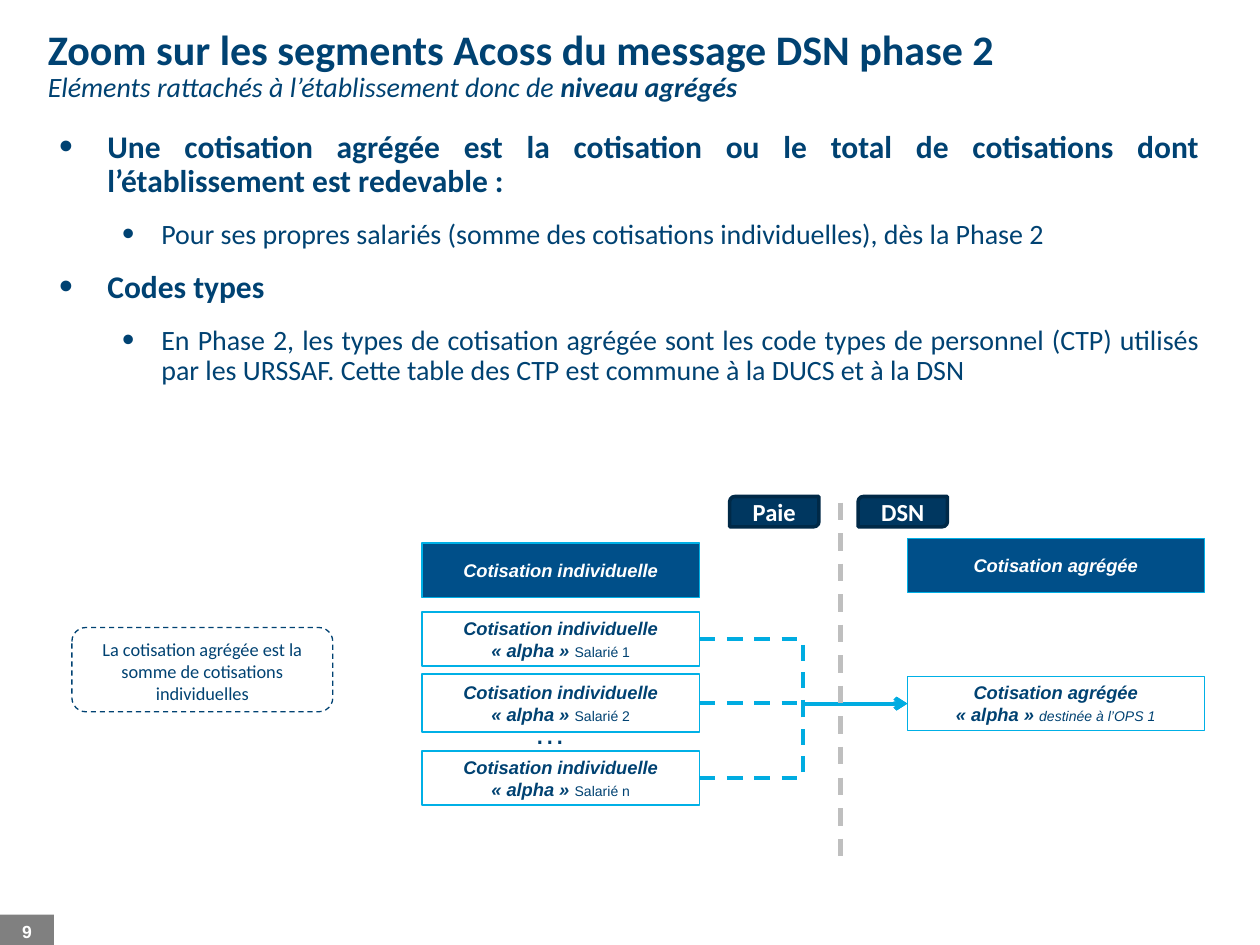
from dataclasses import dataclass
from typing import Any

from lxml import etree
from pptx import Presentation
from pptx import util as u
from pptx.dml.color import RGBColor
from pptx.enum import dml, shapes, text
from pptx.oxml import ns

COLORS = {
    "text": "004272",
    "header": "004F89",
    "border": "00B0E6",
    "flow": "00ACE1",
    "tag": "003760",
    "tag_border": "002947",
    "divider": "BFBFBF",
    "number": "808080",
    "white": "FFFFFF",
}
CENTER = text.PP_ALIGN.CENTER
TITLE_FORMAT = {"size": u.Pt(24), "name": "Calibri", "bold": True}
SUBTITLE_FORMAT = {"size": u.Pt(16), "name": "Calibri", "bold": False, "italic": True}
LABEL_FORMAT = {"size": u.Pt(10.5), "name": "Arial", "bold": True, "italic": True}
DETAIL_FORMAT = {"size": u.Pt(8), "name": "Arial", "bold": False, "italic": False}
NOTE_FORMAT = {"size": u.Pt(10.5), "name": "Calibri"}
TAG_FORMAT = {"size": u.Pt(14), "name": "Calibri", "bold": True}
NUMBER_FORMAT = {"size": u.Pt(10), "name": "Arial", "bold": True}
ELLIPSIS_FORMAT = {"size": u.Pt(18), "name": "Arial"}
LEVEL_FORMATS = [
    {"size": u.Pt(18), "name": "Calibri", "bold": True},
    {"size": u.Pt(16), "name": "Calibri", "bold": False},
]
LEVEL_INDENTS = [(0.97, -0.97), (2.06, -0.79)]


@dataclass
class Piece:
    words: str
    format: dict[str, Any]
    color: str = "text"


@dataclass
class Box:
    left: float
    top: float
    width: float
    height: float
    pieces: list[Piece]
    fill: str = "white"
    line: str | None = "border"
    line_width: float = 0.75
    kind: Any = shapes.MSO_SHAPE.RECTANGLE
    anchor: Any = text.MSO_ANCHOR.MIDDLE
    wrap: bool = True
    dashed: bool = False


def color(name: str) -> RGBColor:
    return RGBColor.from_string(COLORS[name])


def apply(target: Any, values: dict[str, Any]) -> None:
    for name, value in values.items():
        setattr(target, name, value)


def place(shape: Any, left: float, top: float, width: float, height: float) -> None:
    apply(shape, {"left": u.Cm(left), "top": u.Cm(top),
                  "width": u.Cm(width), "height": u.Cm(height)})


def write(paragraph: Any, pieces: list[Piece]) -> None:
    for piece in pieces:
        for index, words in enumerate(piece.words.split("\n")):
            if index:
                paragraph.add_line_break()
            run = paragraph.add_run()
            run.text = words
            apply(run.font, piece.format)
            run.font.color.rgb = color(piece.color)


def draw_box(slide: Any, box: Box) -> Any:
    shape = slide.shapes.add_shape(box.kind, u.Cm(box.left), u.Cm(box.top),
                                   u.Cm(box.width), u.Cm(box.height))
    shape.shadow.inherit = False
    shape.fill.solid()
    shape.fill.fore_color.rgb = color(box.fill)
    if box.line:
        shape.line.color.rgb = color(box.line)
        shape.line.width = u.Pt(box.line_width)
        if box.dashed:
            shape.line.dash_style = dml.MSO_LINE.DASH
    else:
        shape.line.fill.background()
    apply(shape.text_frame, {"word_wrap": box.wrap, "vertical_anchor": box.anchor})
    paragraph = shape.text_frame.paragraphs[0]
    paragraph.alignment = CENTER
    write(paragraph, box.pieces)
    return shape


def style_line(connector: Any, name: str, width: float) -> None:
    connector.line.color.rgb = color(name)
    connector.line.width = u.Pt(width)
    connector.line.dash_style = dml.MSO_LINE.DASH
    etree.SubElement(connector._element.spPr, ns.qn("a:effectLst"))


def draw_flow(slide: Any, source: Any, target: Any) -> None:
    connector = slide.shapes.add_connector(
        shapes.MSO_CONNECTOR.ELBOW,
        source.left + source.width, source.top + source.height // 2,
        target.left, target.top + target.height // 2)
    connector.begin_connect(source, 3)
    connector.end_connect(target, 1)
    style_line(connector, "flow", 2.25)
    etree.SubElement(connector.line._get_or_add_ln(), ns.qn("a:tailEnd"), type="arrow")


def fill_title(title: Any) -> None:
    place(title, 0.71, 0.51, 22.61, 1.63)
    frame = title.text_frame
    apply(frame, {"auto_size": text.MSO_AUTO_SIZE.NONE, "word_wrap": True,
                  "vertical_anchor": text.MSO_ANCHOR.TOP})
    lines = [
        [Piece("Zoom sur les segments Acoss du message DSN phase 2", TITLE_FORMAT)],
        [Piece("Eléments rattachés à l’établissement donc de ", SUBTITLE_FORMAT),
         Piece("niveau agrégés", SUBTITLE_FORMAT | {"bold": True})],
    ]
    for index, pieces in enumerate(lines):
        paragraph = frame.add_paragraph() if index else frame.paragraphs[0]
        apply(paragraph, {"alignment": text.PP_ALIGN.LEFT, "line_spacing": 0.85})
        write(paragraph, pieces)


def fill_body(body: Any) -> None:
    place(body, 0.94, 2.51, 23.5, 5.64)
    frame = body.text_frame
    apply(frame, {"auto_size": text.MSO_AUTO_SIZE.NONE, "word_wrap": True})
    items = [
        (0, "Une cotisation agrégée est la cotisation ou le total de cotisations dont "
            "l’établissement est redevable :"),
        (1, "Pour ses propres salariés (somme des cotisations individuelles), dès la Phase 2"),
        (0, "Codes types"),
        (1, "En Phase 2, les types de cotisation agrégée sont les code types de personnel "
            "(CTP) utilisés par les URSSAF. Cette table des CTP est commune à la DUCS et à la DSN"),
    ]
    for index, (level, words) in enumerate(items):
        paragraph = frame.add_paragraph() if index else frame.paragraphs[0]
        apply(paragraph, {"level": level, "alignment": text.PP_ALIGN.JUSTIFY,
                          "line_spacing": 0.9, "space_before": u.Pt(12 if index else 0)})
        properties = paragraph._p.get_or_add_pPr()
        margin, indent = LEVEL_INDENTS[level]
        properties.set("marL", str(u.Cm(margin)))
        properties.set("indent", str(u.Cm(indent)))
        etree.SubElement(properties, ns.qn("a:buSzPct"), val="125000")
        etree.SubElement(properties, ns.qn("a:buChar"), char="•")
        write(paragraph, [Piece(words, LEVEL_FORMATS[level])])


def draw_diagram(slide: Any) -> None:
    headers = [(8.51, 10.95, 5.59, "Cotisation individuelle"),
               (18.29, 10.85, 5.99, "Cotisation agrégée")]
    for left, top, width, words in headers:
        draw_box(slide, Box(left, top, width, 1.09, [Piece(words, LABEL_FORMAT, "white")],
                            fill="header"))

    aggregate = draw_box(slide, Box(18.29, 13.64, 5.99, 1.09, [
        Piece("Cotisation agrégée\n«\u00a0alpha\u00a0» ".replace("\u00a0", chr(160)), LABEL_FORMAT),
        Piece("destinée à l’OPS 1", DETAIL_FORMAT | {"italic": True})]))
    for top, height, employee in [(12.34, 1.09, "1"), (13.59, 1.17, "2"), (15.14, 1.09, "n")]:
        individual = draw_box(slide, Box(8.51, top, 5.59, height, [
            Piece("Cotisation individuelle\n« alpha » ", LABEL_FORMAT),
            Piece(f"Salarié {employee}", DETAIL_FORMAT)]))
        draw_flow(slide, individual, aggregate)

    ellipsis = slide.shapes.add_textbox(u.Cm(9.7), u.Cm(14.25), u.Cm(2.77), u.Cm(1.02))
    ellipsis.text_frame.word_wrap = True
    ellipsis.text_frame.paragraphs[0].alignment = CENTER
    write(ellipsis.text_frame.paragraphs[0], [Piece("…", ELLIPSIS_FORMAT)])

    draw_box(slide, Box(1.45, 12.65, 5.26, 1.7, [
        Piece("La cotisation agrégée est la somme de cotisations individuelles", NOTE_FORMAT)],
        line="text", kind=shapes.MSO_SHAPE.ROUNDED_RECTANGLE,
        anchor=text.MSO_ANCHOR.TOP, dashed=True))

    divider = slide.shapes.add_connector(shapes.MSO_CONNECTOR.STRAIGHT, u.Cm(16.94),
                                         u.Cm(10.13), u.Cm(16.94), u.Cm(17.32))
    style_line(divider, "divider", 2.5)
    for left, words in [(14.71, "Paie"), (17.3, "DSN")]:
        draw_box(slide, Box(left, 10.01, 1.8, 0.61, [Piece(words, TAG_FORMAT, "white")],
                            fill="tag", line="tag_border", line_width=2, wrap=False,
                            kind=shapes.MSO_SHAPE.ROUND_2_DIAG_RECTANGLE))


def main() -> None:
    presentation = Presentation()
    apply(presentation, {"slide_width": u.Cm(25.4), "slide_height": u.Cm(19.05)})
    slide = presentation.slides.add_slide(presentation.slide_layouts[1])
    fill_title(slide.shapes.title)
    fill_body(slide.placeholders[1])
    draw_diagram(slide)
    number = draw_box(slide, Box(0, 18.44, 1.09, 0.69, [Piece("9", NUMBER_FORMAT, "white")],
                                 fill="number", line=None))
    apply(number.text_frame, {"margin_left": u.Cm(0.05), "margin_right": u.Cm(0.05)})
    presentation.save("out.pptx")


if __name__ == "__main__":
    main()
